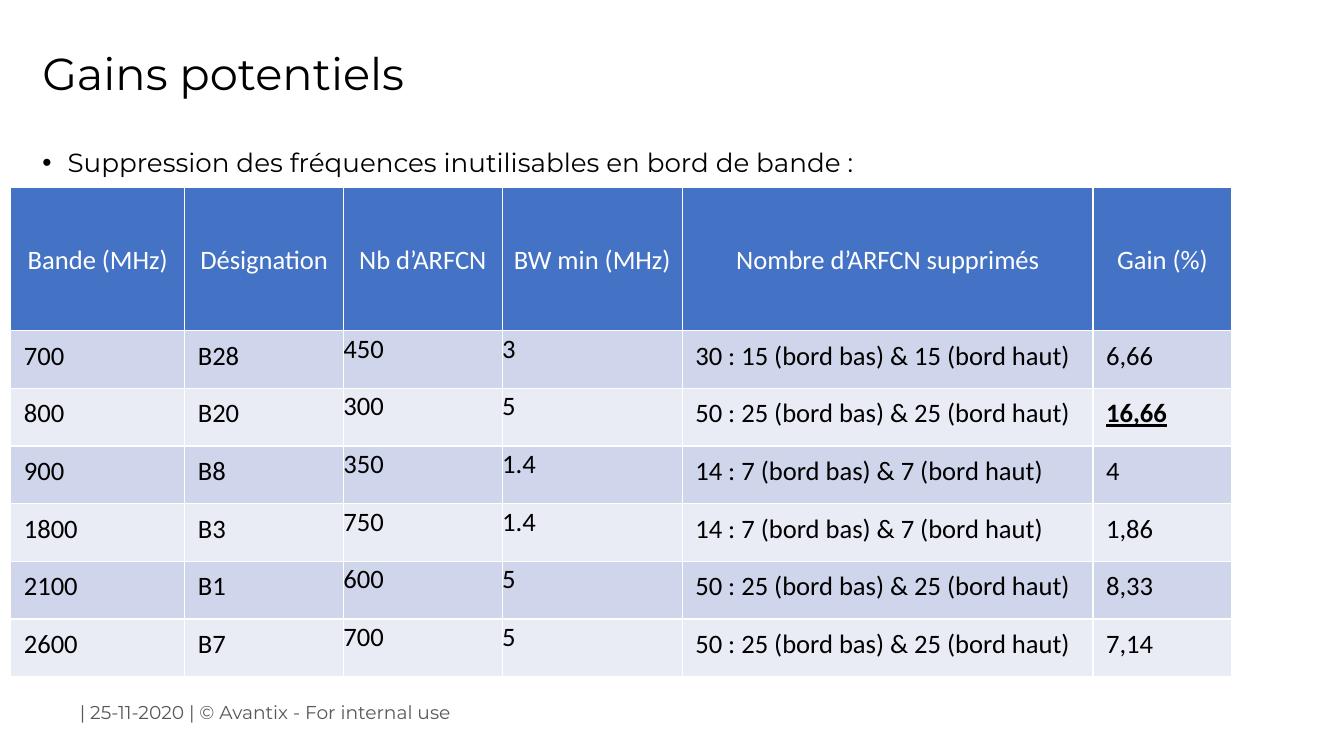
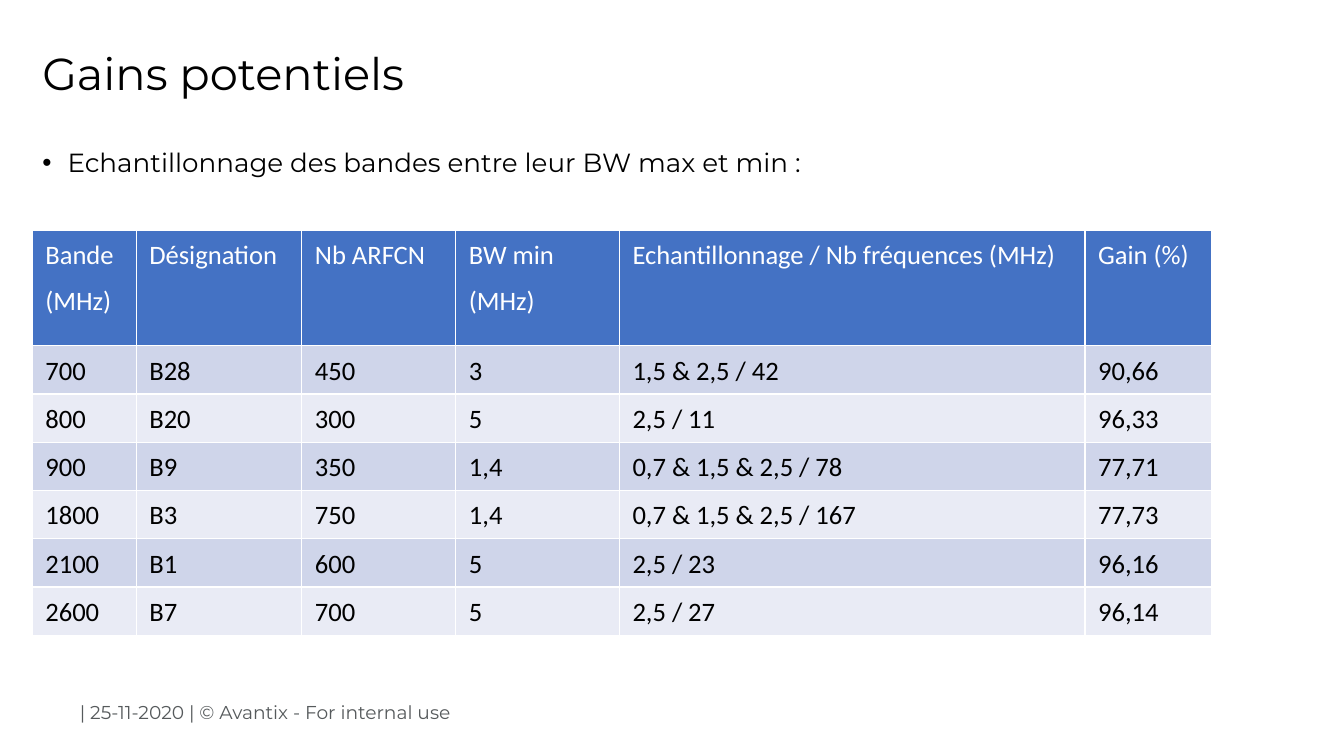
from lxml.etree import SubElement
from pptx import Presentation
from pptx.dml.color import RGBColor
from pptx.enum.text import MSO_ANCHOR as Anchor, PP_ALIGN as Align
from pptx.oxml.ns import qn
from pptx.util import Inches, Pt

BLACK = RGBColor(0x00, 0x00, 0x00)
WHITE = RGBColor(0xFF, 0xFF, 0xFF)
GREY = RGBColor(0x56, 0x5A, 0x5C)
HEADER_BLUE = RGBColor(0x44, 0x72, 0xC4)
BANDS = (RGBColor(0xE9, 0xEB, 0xF5), RGBColor(0xCF, 0xD5, 0xEA))
TITLE_FONT, TABLE_FONT = "Montserrat", "Calibri"
FOOTER = "| 25-11-2020 | © Avantix - For internal use"


def write(frame, text, size, font=TITLE_FONT, color=BLACK, align=Align.LEFT,
          spacing=1.0, after=0, bold=False, underline=False):
    """Fill a text frame, one paragraph for each line of text."""
    for index, line in enumerate(text.split("\n")):
        para = frame.add_paragraph() if index else frame.paragraphs[0]
        para.alignment = align
        para.line_spacing = spacing
        para.space_before, para.space_after = Pt(0), Pt(after)
        span = para.add_run()
        span.text = line
        span.font.name, span.font.size = font, Pt(size)
        span.font.color.rgb = color
        span.font.bold, span.font.underline = bold, underline


def outline(cell):
    """Draw a thin white border on all four sides of a cell."""
    properties = cell._tc.get_or_add_tcPr()
    for index, side in enumerate(("a:lnL", "a:lnR", "a:lnT", "a:lnB")):
        line = properties.makeelement(qn(side), {"w": str(Pt(1))})
        fill = SubElement(line, qn("a:solidFill"))
        SubElement(fill, qn("a:srgbClr"), val=str(WHITE))
        properties.insert(index, line)


# Column widths are percentages of the table width; other lengths are in
# hundredths of the slide's width (left, width) or height (top, rows)
PAGES = [
    dict(
        bullet="Suppression des fréquences inutilisables en bord de bande :",
        left=0.8, top=24.8, width=90.85, header_row=18.95, body_row=7.63,
        columns=(14.25, 13, 13, 14.75, 33.65, 11.35),
        header_align=Align.CENTER, header_anchor=Anchor.MIDDLE,
        flush_columns=(2, 3), highlight="16,66",
        rows=[
            ("Bande (MHz)", "Désignation", "Nb d’ARFCN", "BW min (MHz)",
             "Nombre d’ARFCN supprimés", "Gain (%)"),
            ("700", "B28", "450", "3", "30 : 15 (bord bas) & 15 (bord haut)", "6,66"),
            ("800", "B20", "300", "5", "50 : 25 (bord bas) & 25 (bord haut)", "16,66"),
            ("900", "B8", "350", "1.4", "14 : 7 (bord bas) & 7 (bord haut)", "4"),
            ("1800", "B3", "750", "1.4", "14 : 7 (bord bas) & 7 (bord haut)", "1,86"),
            ("2100", "B1", "600", "5", "50 : 25 (bord bas) & 25 (bord haut)", "8,33"),
            ("2600", "B7", "700", "5", "50 : 25 (bord bas) & 25 (bord haut)", "7,14"),
        ]),
    dict(
        bullet="Echantillonnage des bandes entre leur BW max et min :",
        left=2.4, top=30.45, width=87.75, header_row=15.3, body_row=6.38,
        columns=(8.82, 14.04, 13.06, 13.87, 39.48, 10.73),
        header_align=Align.JUSTIFY, header_anchor=Anchor.TOP,
        flush_columns=(), highlight=None,
        rows=[
            ("Bande\n(MHz)", "Désignation", "Nb ARFCN", "BW min\n(MHz)",
             "Echantillonnage / Nb fréquences (MHz)", "Gain (%)"),
            ("700", "B28", "450", "3", "1,5 & 2,5 / 42", "90,66"),
            ("800", "B20", "300", "5", "2,5 / 11", "96,33"),
            ("900", "B9", "350", "1,4", "0,7 & 1,5 & 2,5 / 78", "77,71"),
            ("1800", "B3", "750", "1,4", "0,7 & 1,5 & 2,5 / 167", "77,73"),
            ("2100", "B1", "600", "5", "2,5 / 23", "96,16"),
            ("2600", "B7", "700", "5", "2,5 / 27", "96,14"),
        ]),
]

deck = Presentation()
deck.slide_width, deck.slide_height = Inches(13.33), Inches(7.5)
column, row = deck.slide_width / 100, deck.slide_height / 100

# Title and body places, shared through the layout
layout = deck.slide_layouts[1]
for holder, top, height in zip(layout.placeholders, (2.4, 19.2), (15.3, 75.6)):
    holder.left, holder.width = int(2.4 * column), int(95.7 * column)
    holder.top, holder.height = int(top * row), int(height * row)

for content in PAGES:
    page = deck.slides.add_slide(layout)

    # Title and bullet
    title, body = page.placeholders
    title.text_frame.vertical_anchor = Anchor.MIDDLE
    write(title.text_frame, "Gains potentiels", 32, spacing=0.9)
    write(body.text_frame, content["bullet"], 18.7, spacing=0.9)
    bullet = body.text_frame.paragraphs[0]._p.get_or_add_pPr()
    bullet.set("marL", str(Inches(0.25)))
    bullet.set("indent", str(-Inches(0.25)))

    # Footer
    box = page.shapes.add_textbox(int(5.2 * column), int(92 * row),
                                  int(32 * column), int(4.4 * row))
    box.text_frame.word_wrap = True
    write(box.text_frame, FOOTER, 13.3, color=GREY)

    # Table
    rows = content["rows"]
    table_width = content["width"] * column
    heights = [content["header_row"]] + [content["body_row"]] * (len(rows) - 1)
    table = page.shapes.add_table(
        len(rows), len(rows[0]), int(content["left"] * column),
        int(content["top"] * row), int(table_width), int(sum(heights) * row)).table
    for table_column, share in zip(table.columns, content["columns"]):
        table_column.width = int(table_width * share / 100)
    for r, (values, height) in enumerate(zip(rows, heights)):
        table.rows[r].height = int(height * row)
        header = r == 0
        for c, value in enumerate(values):
            cell = table.cell(r, c)
            flush = c in content["flush_columns"]
            cell.margin_left = cell.margin_right = Inches(0 if flush else 0.13)
            cell.margin_top = cell.margin_bottom = Inches(0 if flush else 0.07)
            cell.vertical_anchor = content["header_anchor"] if header else Anchor.TOP
            cell.fill.solid()
            cell.fill.fore_color.rgb = HEADER_BLUE if header else BANDS[r % 2]
            outline(cell)
            strong = value == content["highlight"]
            write(cell.text_frame, value, 19, font=TABLE_FONT,
                  color=WHITE if header else BLACK,
                  align=content["header_align"] if header else Align.JUSTIFY,
                  spacing=1.07, after=8, bold=strong, underline=strong)

deck.save("out.pptx")
